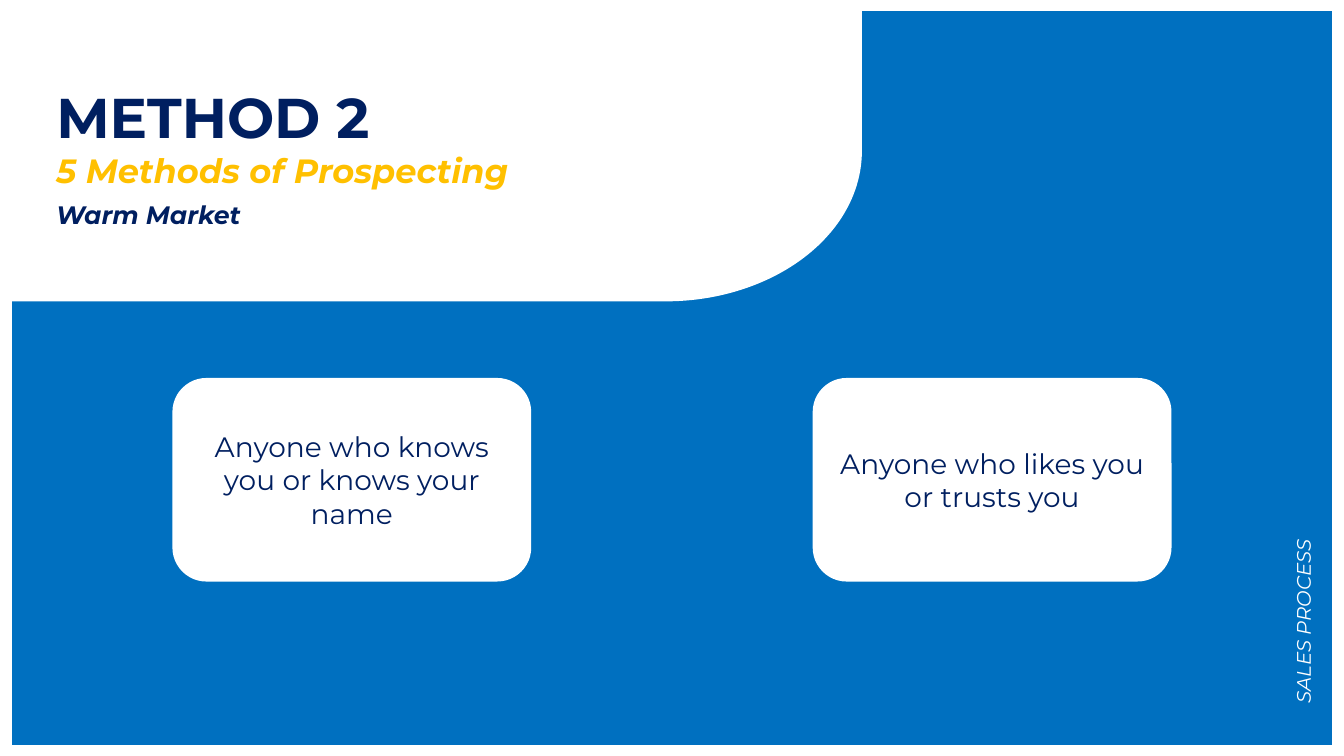
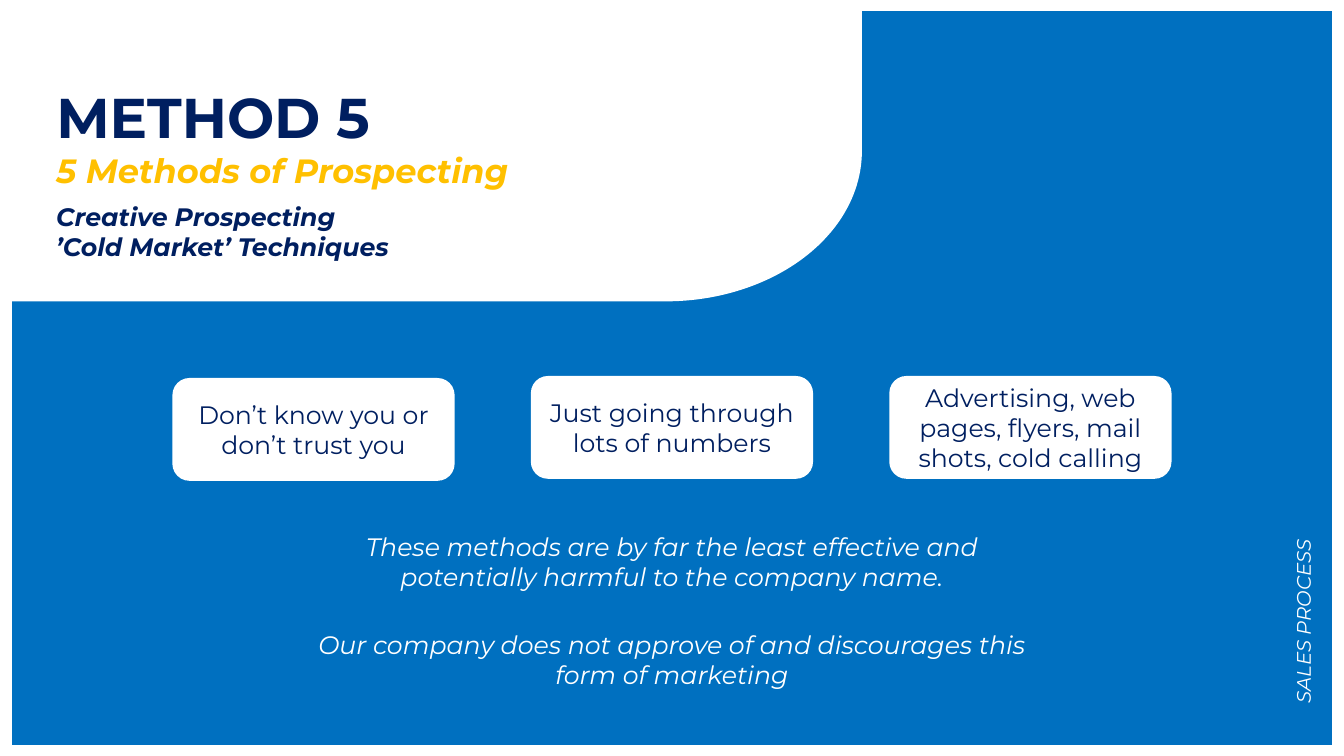
from math import cos, pi, sin

from pptx import Presentation
from pptx.dml.color import RGBColor
from pptx.enum.shapes import MSO_SHAPE
from pptx.enum.text import MSO_ANCHOR, MSO_AUTO_SIZE, PP_ALIGN
from pptx.util import Inches, Pt

FONT = "Montserrat"
NAVY, BLUE, GOLD, WHITE = "001F60", "0070C0", "FFC000", "FFFFFF"

deck = Presentation()
deck.slide_width, deck.slide_height = Inches(13.33), Inches(7.5)
COL, ROW = deck.slide_width / 100, deck.slide_height / 100

CARDS_LEFT, CARDS_SPAN = 12.83, 74.34
HEADER_WIDTH, HEADER_HEIGHT = 64.13, 39.87
CURVE_X, CURVE_Y, CURVE_STEPS = 49.5, 20, 48


def paint(shape, colour):
    shape.shadow.inherit = False
    shape.fill.solid()
    shape.fill.fore_color.rgb = RGBColor.from_string(colour)
    shape.line.fill.background()


def write(slide, area, lines, align=PP_ALIGN.LEFT, card=False):
    left, top, width, height = area
    place = [round(v) for v in (left * COL, top * ROW, width * COL, height * ROW)]
    if card:
        shape = slide.shapes.add_shape(MSO_SHAPE.ROUNDED_RECTANGLE, *place)
        paint(shape, WHITE)
    else:
        shape = slide.shapes.add_textbox(*place)
    frame = shape.text_frame
    frame.word_wrap = True
    if card:
        frame.vertical_anchor = MSO_ANCHOR.MIDDLE
    else:
        frame.auto_size = MSO_AUTO_SIZE.SHAPE_TO_FIT_TEXT
    for index, (text, size, colour, bold, italic) in enumerate(lines):
        paragraph = frame.add_paragraph() if index else frame.paragraphs[0]
        paragraph.alignment = align
        run = paragraph.add_run()
        run.text = text
        run.font.name = FONT
        run.font.size = Pt(size)
        run.font.bold, run.font.italic = bold, italic
        run.font.color.rgb = RGBColor.from_string(colour)
    return shape


methods = [
    {
        "title": "METHOD 2",
        "subtitle": ["Warm Market"],
        "subtitle_rows": (25.73, 5.33),
        "card_size": (26.7, 26.93),
        "card_font": 20,
        "cards": [
            ("Anyone who knows you or knows your name", 50),
            ("Anyone who likes you or trusts you", 50),
        ],
        "remarks": [],
    },
    {
        "title": "METHOD 5",
        "subtitle": ["Creative Prospecting", "’Cold Market’ Techniques"],
        "subtitle_rows": (26, 9.47),
        "card_size": (21, 13.6),
        "card_font": 18,
        "cards": [
            ("Don’t know you or don’t trust you", 50),
            ("Just going through lots of numbers", 49.73),
            ("Advertising, web pages, flyers, mail shots, cold calling", 49.73),
        ],
        "remarks": [
            ("These methods are by far the least effective and "
             "potentially harmful to the company name.", 69.6),
            ("Our company does not approve of and discourages this "
             "form of marketing", 82.53),
        ],
    },
]

angles = [pi / 2 * step / CURVE_STEPS for step in range(CURVE_STEPS + 1)]
curve = [
    (CURVE_X + (HEADER_WIDTH - CURVE_X) * sin(angle),
     CURVE_Y + (HEADER_HEIGHT - CURVE_Y) * cos(angle))
    for angle in angles
]
header_outline = [(0, HEADER_HEIGHT), *curve, (HEADER_WIDTH, 0)]

for method in methods:
    slide = deck.slides.add_slide(deck.slide_layouts[6])

    backdrop = slide.shapes.add_shape(
        MSO_SHAPE.RECTANGLE,
        round(0.9 * COL), round(1.47 * ROW), round(98.2 * COL), round(97.07 * ROW))
    paint(backdrop, BLUE)

    outline = slide.shapes.build_freeform(0, 0)
    outline.add_line_segments(
        [(round(x * COL), round(y * ROW)) for x, y in header_outline])
    paint(outline.convert_to_shape(), WHITE)

    write(slide, (3.45, 10.27, 44.5, 15.73), [
        (method["title"], 40, NAVY, True, False),
        ("5 Methods of Prospecting", 24, GOLD, True, True),
    ])
    subtitle_top, subtitle_height = method["subtitle_rows"]
    write(slide, (3.45, subtitle_top, 36.15, subtitle_height),
          [(text, 18, NAVY, True, True) for text in method["subtitle"]])

    card_width, card_height = method["card_size"]
    card_step = (CARDS_SPAN - card_width) / (len(method["cards"]) - 1)
    for index, (text, top) in enumerate(method["cards"]):
        write(slide, (CARDS_LEFT + index * card_step, top, card_width, card_height),
              [(text, method["card_font"], NAVY, False, False)],
              PP_ALIGN.CENTER, card=True)

    for text, top in method["remarks"]:
        write(slide, (22.5, top, 55, 9.47), [(text, 18, WHITE, False, True)],
              PP_ALIGN.CENTER)

    section = write(slide, (88.35, 76.8, 17.25, 4.53),
                    [("SALES PROCESS", 14, WHITE, False, True)])
    section.rotation = 270

deck.save("out.pptx")
